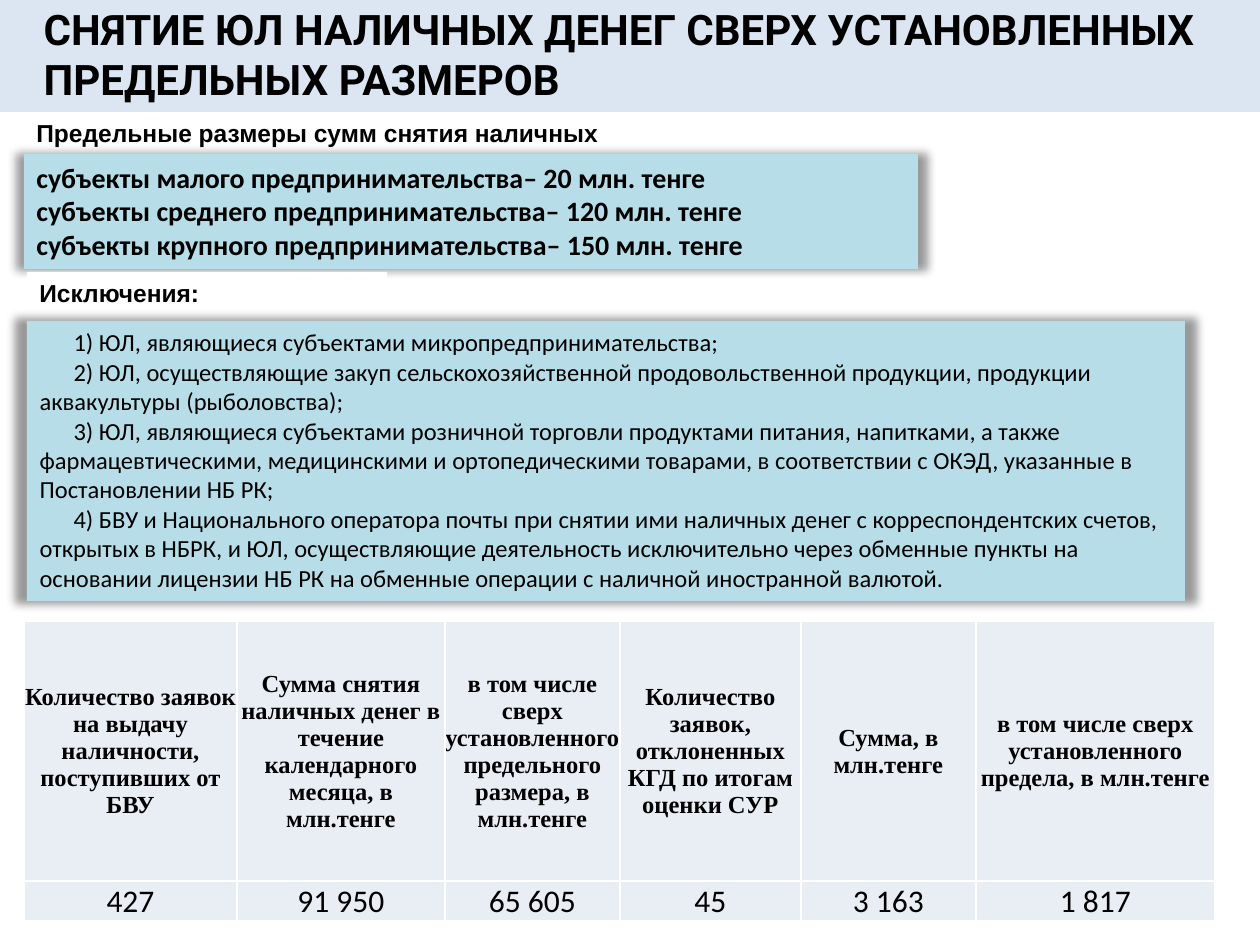
"""Build the slide on cash withdrawal limits for legal entities."""
from dataclasses import dataclass

from lxml.etree import SubElement
from pptx import Presentation
from pptx.dml.color import RGBColor
from pptx.enum.shapes import MSO_SHAPE as Shape
from pptx.enum.text import MSO_ANCHOR as Anchor, MSO_AUTO_SIZE as AutoSize, PP_ALIGN as Align
from pptx.oxml.ns import qn
from pptx.util import Emu, Pt

PX = 914400 / 126
COLORS = {
    "text": "000000",
    "white": "FFFFFF",
    "panel": "B7DEE8",
    "banner": "DCE6F2",
    "cell": "E9EDF4",
}


@dataclass(frozen=True)
class Area:
    left: int
    top: int
    width: int
    height: int


@dataclass(frozen=True)
class Style:
    font: str
    size: int
    bold: bool = False
    align: Align = Align.LEFT


@dataclass(frozen=True)
class Panel:
    area: Area
    fill: str
    lines: tuple[str, ...]
    style: Style
    shadow: bool = False


@dataclass(frozen=True)
class Column:
    width: int
    heading: str
    value: str


TITLE_STYLE = Style("Roboto", 24, True)
LABEL_STYLE = Style("Arial", 14, True)
LIMIT_STYLE = Style("Calibri", 16, True)
BODY_STYLE = Style("Calibri", 14)
HEAD_STYLE = Style("Times New Roman", 14, True, Align.CENTER)
VALUE_STYLE = Style("Calibri", 18, False, Align.CENTER)

TITLE = "СНЯТИЕ ЮЛ НАЛИЧНЫХ ДЕНЕГ СВЕРХ УСТАНОВЛЕННЫХ ПРЕДЕЛЬНЫХ РАЗМЕРОВ"
TITLE_AREA = Area(31, -3, 1203, 115)
BANNER_AREA = Area(0, 0, 1260, 112)
EXCEPTIONS_AREA = Area(27, 321, 1158, 280)
TABLE_AREA = Area(24, 621, 1191, 299)
ROW_HEIGHTS = (260, 39)
FIRST_LINE = 34

PANELS = (
    Panel(Area(24, 112, 590, 43), "white",
          ("Предельные размеры сумм снятия наличных",), LABEL_STYLE),
    Panel(Area(24, 154, 894, 115), "panel", (
        "субъекты малого предпринимательства– 20 млн. тенге",
        "субъекты среднего предпринимательства– 120 млн. тенге",
        "субъекты крупного предпринимательства– 150 млн. тенге",
    ), LIMIT_STYLE, True),
    Panel(Area(27, 272, 360, 43), "white", ("Исключения:",), LABEL_STYLE),
)
EXCEPTIONS = (
    "1) ЮЛ, являющиеся субъектами микропредпринимательства;",
    "2) ЮЛ, осуществляющие закуп сельскохозяйственной продовольственной продукции, "
    "продукции аквакультуры (рыболовства);",
    "3) ЮЛ, являющиеся субъектами розничной торговли продуктами питания, напитками, "
    "а также фармацевтическими, медицинскими и ортопедическими товарами, "
    "в соответствии с ОКЭД, указанные в Постановлении НБ РК;",
    "4) БВУ и Национального оператора почты при снятии ими наличных денег "
    "с корреспондентских счетов, открытых в НБРК, и ЮЛ, осуществляющие деятельность "
    "исключительно через обменные пункты на основании лицензии НБ РК "
    "на обменные операции с наличной иностранной валютой.",
)
COLUMNS = (
    Column(213, "Количество заявок на выдачу наличности, поступивших от БВУ", "427"),
    Column(208, "Сумма снятия наличных денег в течение календарного месяца, в млн.тенге",
           "91 950"),
    Column(175, "в том числе сверх установленного предельного размера, в млн.тенге",
           "65 605"),
    Column(181, "Количество заявок, отклоненных КГД по итогам оценки СУР", "45"),
    Column(175, "Сумма, в млн.тенге", "3 163"),
    Column(239, "в том числе сверх установленного предела, в млн.тенге", "1 817"),
)


def px(value: int) -> Emu:
    """Turn pixels into EMU."""
    return Emu(round(value * PX))


def bounds(area: Area) -> tuple[Emu, ...]:
    """Return the area in EMU."""
    return tuple(px(side) for side in (area.left, area.top, area.width, area.height))


def paint(shape, color: str) -> None:
    """Give a shape or cell a solid fill."""
    shape.fill.solid()
    shape.fill.fore_color.rgb = RGBColor.from_string(COLORS[color])


def write(frame, lines: tuple[str, ...], style: Style) -> None:
    """Write one paragraph per line in the given style."""
    frame.word_wrap = True
    frame.text = "\n".join(lines)
    for para in frame.paragraphs:
        para.alignment = style.align
        para.space_before = Pt(0)
        for span in para.runs:
            span.font.name = style.font
            span.font.size = Pt(style.size)
            span.font.bold = style.bold
            span.font.color.rgb = RGBColor.from_string(COLORS["text"])


def fill_placeholder(shape, area: Area, lines: tuple[str, ...], style: Style) -> None:
    """Move a placeholder to the front of its area and write its text."""
    shape.left, shape.top, shape.width, shape.height = bounds(area)
    shape.element.getparent().append(shape.element)
    shape.text_frame.vertical_anchor = Anchor.TOP
    shape.text_frame.auto_size = AutoSize.NONE
    write(shape.text_frame, lines, style)


def add_glow_shadow(shape) -> None:
    """Add a centred soft shadow slightly larger than the shape."""
    effects = shape.element.spPr.find(qn("a:effectLst"))
    shadow = SubElement(effects, qn("a:outerShdw"), blurRad=str(Pt(5)),
                        sx="102000", sy="102000", algn="ctr", rotWithShape="0")
    color = SubElement(shadow, qn("a:srgbClr"), val=COLORS["text"])
    SubElement(color, qn("a:alpha"), val="40000")


def add_box(page, area: Area, fill: str, shadow: bool = False):
    """Add a rectangle without outline."""
    box = page.shapes.add_shape(Shape.RECTANGLE, *bounds(area))
    box.shadow.inherit = False
    paint(box, fill)
    box.line.fill.background()
    if shadow:
        add_glow_shadow(box)
    return box


def add_panel(page, panel: Panel) -> None:
    """Add a filled rectangle with text."""
    box = add_box(page, panel.area, panel.fill, panel.shadow)
    box.text_frame.vertical_anchor = Anchor.TOP
    write(box.text_frame, panel.lines, panel.style)


def add_exceptions(page) -> None:
    """Set the list of exceptions over its panel."""
    add_box(page, EXCEPTIONS_AREA, "panel", shadow=True)
    body = page.placeholders[1]
    fill_placeholder(body, EXCEPTIONS_AREA, EXCEPTIONS, BODY_STYLE)
    for para in body.text_frame.paragraphs:
        props = para._p.get_or_add_pPr()
        props.set("marL", "0")
        props.set("indent", str(px(FIRST_LINE)))
        SubElement(props, qn("a:buNone"))


def fill_cell(cell, text: str, style: Style, anchor: Anchor) -> None:
    """Fill one table cell."""
    paint(cell, "cell")
    cell.margin_left = cell.margin_right = cell.margin_bottom = 0
    cell.margin_top = px(1)
    cell.vertical_anchor = anchor
    write(cell.text_frame, (text,), style)


def add_figures(page) -> None:
    """Add the table of applications and sums."""
    table = page.shapes.add_table(len(ROW_HEIGHTS), len(COLUMNS), *bounds(TABLE_AREA)).table
    table.first_row = table.horz_banding = False
    for row, height in zip(table.rows, ROW_HEIGHTS):
        row.height = px(height)
    for index, column in enumerate(COLUMNS):
        table.columns[index].width = px(column.width)
        fill_cell(table.cell(0, index), column.heading, HEAD_STYLE, Anchor.MIDDLE)
        fill_cell(table.cell(1, index), column.value, VALUE_STYLE, Anchor.BOTTOM)


def main() -> None:
    """Build and save the deck."""
    deck = Presentation()
    deck.slide_width, deck.slide_height = px(1260), px(945)
    page = deck.slides.add_slide(deck.slide_layouts[1])
    for panel in PANELS:
        add_panel(page, panel)
    add_exceptions(page)
    add_box(page, BANNER_AREA, "banner")
    fill_placeholder(page.shapes.title, TITLE_AREA, (TITLE,), TITLE_STYLE)
    add_figures(page)
    deck.save("out.pptx")


if __name__ == "__main__":
    main()
